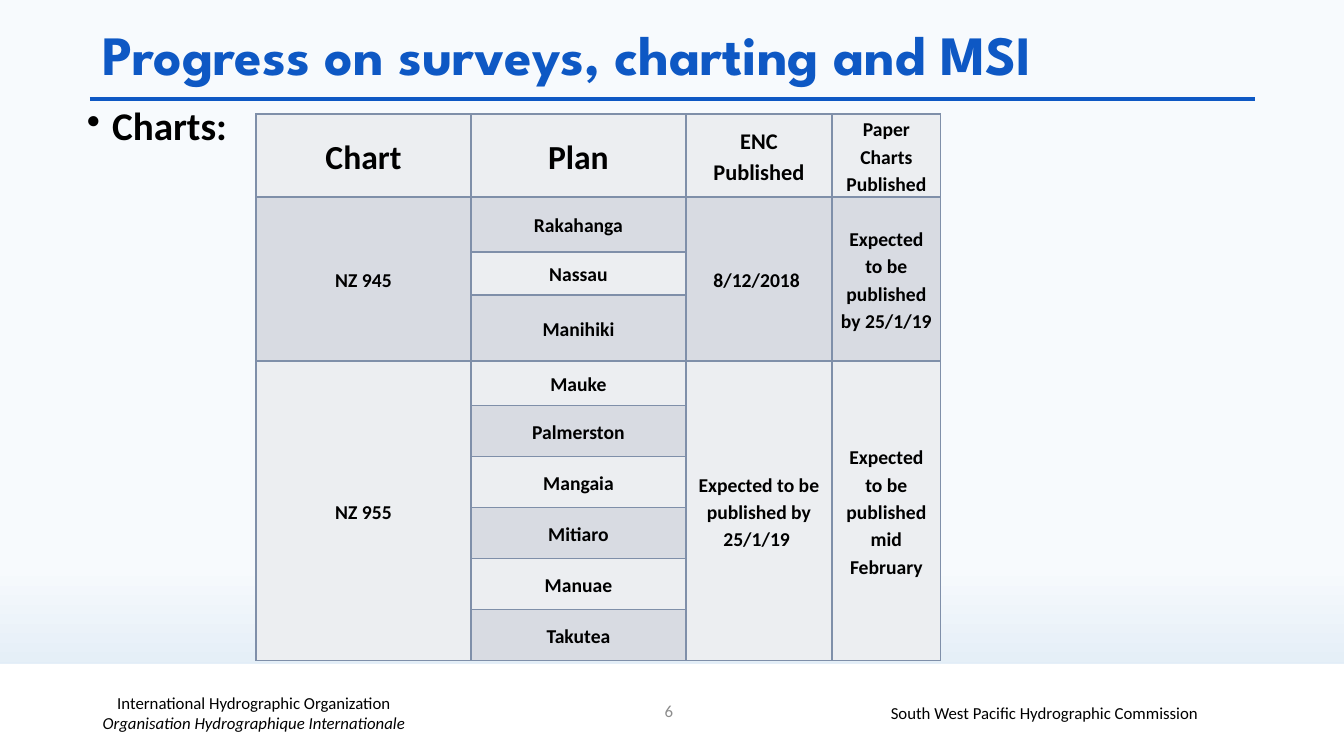
"""Build the slide on charting progress, with its table of charts and plans."""
from lxml import etree
from pptx import Presentation
from pptx.dml.color import RGBColor
from pptx.enum.shapes import MSO_CONNECTOR, MSO_SHAPE
from pptx.enum.text import MSO_ANCHOR, PP_ALIGN
from pptx.oxml.ns import qn
from pptx.util import Emu, Pt

PX = 12192000 / 1344
LEFT, CENTER = PP_ALIGN.LEFT, PP_ALIGN.CENTER
TOP, MIDDLE = MSO_ANCHOR.TOP, MSO_ANCHOR.MIDDLE
BLUE, BLACK, WHITE, GREY = "0E58C4", "000000", "FFFFFF", "8C8C8C"
LIGHT, DARK, BORDER = "ECEEF1", "D8DBE2", "7F8FA9"
rgb = RGBColor.from_string


def px(*values):
    return [Emu(round(v * PX)) for v in values]


def add_text(box, text, size, color=BLACK, font="Calibri", bold=False,
             align=CENTER, anchor=MIDDLE, spacing=1.0):
    tf = s.shapes.add_textbox(*px(*box)).text_frame
    tf.word_wrap = True
    tf.vertical_anchor = anchor
    p = tf.paragraphs[0]
    p.add_run().text = text
    p.alignment, p.line_spacing = align, spacing
    p.font.name, p.font.size, p.font.bold = font, Pt(size), bold
    p.font.color.rgb = rgb(color)
    return p


prs = Presentation()
prs.slide_width, prs.slide_height = px(1344, 756)
s = prs.slides.add_slide(prs.slide_layouts[6])

bg = s.background.fill
bg.gradient()
bg.gradient_angle = 270
for stop, position, color in zip(bg.gradient_stops, (0.75, 1), ("F7FAFD", "D0E2F1")):
    stop.position = position
    stop.color.rgb = rgb(color)

rule = s.shapes.add_connector(MSO_CONNECTOR.STRAIGHT, *px(90, 99, 1255, 99))
rule.line.color.rgb = rgb(BLUE)
rule.line.width = Pt(2.25)
etree.SubElement(rule._element.spPr, qn("a:effectLst"))

band = s.shapes.add_shape(MSO_SHAPE.RECTANGLE, *px(0, 664, 1344, 92))
band.shadow.inherit = False
band.fill.solid()
band.fill.fore_color.rgb = rgb(WHITE)
band.line.fill.background()

p = add_text((27, 693, 454, 40), "International Hydrographic Organization", 12)
p.add_line_break()
r = p.add_run()
r.text = "Organisation Hydrographique Internationale"
r.font.italic = True
add_text((867, 693, 355, 40), "South West Pacific Hydrographic Commission", 12)
add_text((518, 691, 302, 40), "6", 12, GREY)
add_text((93, 28, 1159, 60), "Progress on surveys, charting and MSI", 39.6, BLUE,
         "League Spartan", True, LEFT, spacing=0.9)

p = add_text((77, 102, 240, 74), "Charts:", 28, bold=True, align=LEFT, anchor=TOP, spacing=0.9)
pPr = p._p.get_or_add_pPr()
pPr.set("marL", "228600")
pPr.set("indent", "-228600")
bullet = etree.Element(qn("a:buChar"), char="•")
pPr.insert(list(pPr).index(pPr.find(qn("a:lnSpc"))) + 1, bullet)

col_widths = [215, 215, 146, 109]
row_heights = [83, 55, 43, 66, 45] + [51] * 5
header = [("Chart", 24), ("Plan", 24), ("ENC Published", 16), ("Paper Charts Published", 14)]
charts = [
    ("NZ 945", ["Rakahanga", "Nassau", "Manihiki"],
     "8/12/2018 ", "Expected to be published by 25/1/19"),
    ("NZ 955", ["Mauke", "Palmerston", "Mangaia", "Mitiaro", "Manuae", "Takutea"],
     "Expected to be published by 25/1/19 ", "Expected to be published mid February"),
]

table = s.shapes.add_table(len(row_heights), len(col_widths),
                           *px(256, 114, sum(col_widths), sum(row_heights))).table
for col, width in zip(table.columns, px(*col_widths)):
    col.width = width
for row, height in zip(table.rows, px(*row_heights)):
    row.height = height

entries = {(0, j): entry for j, entry in enumerate(header)}
first = 1
for chart, plans, enc, paper in charts:
    last = first + len(plans) - 1
    for j, text in ((0, chart), (2, enc), (3, paper)):
        entries[first, j] = (text, 14)
        table.cell(first, j).merge(table.cell(last, j))
    for i, plan in enumerate(plans, first):
        entries[i, 1] = (plan, 14)
    first = last + 1

for i in range(len(row_heights)):
    for j in range(len(col_widths)):
        cell = table.cell(i, j)
        cell.margin_left, cell.margin_top, cell.margin_right, cell.margin_bottom = px(7, 0, 7, 0)
        cell.vertical_anchor = MIDDLE
        tcPr = cell._tc.get_or_add_tcPr()
        for side in ("a:lnL", "a:lnR", "a:lnT", "a:lnB"):
            ln = etree.SubElement(tcPr, qn(side), w="12700")
            etree.SubElement(etree.SubElement(ln, qn("a:solidFill")), qn("a:srgbClr"), val=BORDER)
        cell.fill.solid()
        cell.fill.fore_color.rgb = rgb(DARK if i % 2 else LIGHT)
        if (i, j) in entries:
            text, size = entries[i, j]
            p = cell.text_frame.paragraphs[0]
            p.add_run().text = text
            p.alignment, p.line_spacing, p.space_after = CENTER, 1.15, Pt(10)
            p.font.name, p.font.size, p.font.bold = "Calibri", Pt(size), True
            p.font.color.rgb = rgb(BLACK)

prs.save("out.pptx")
